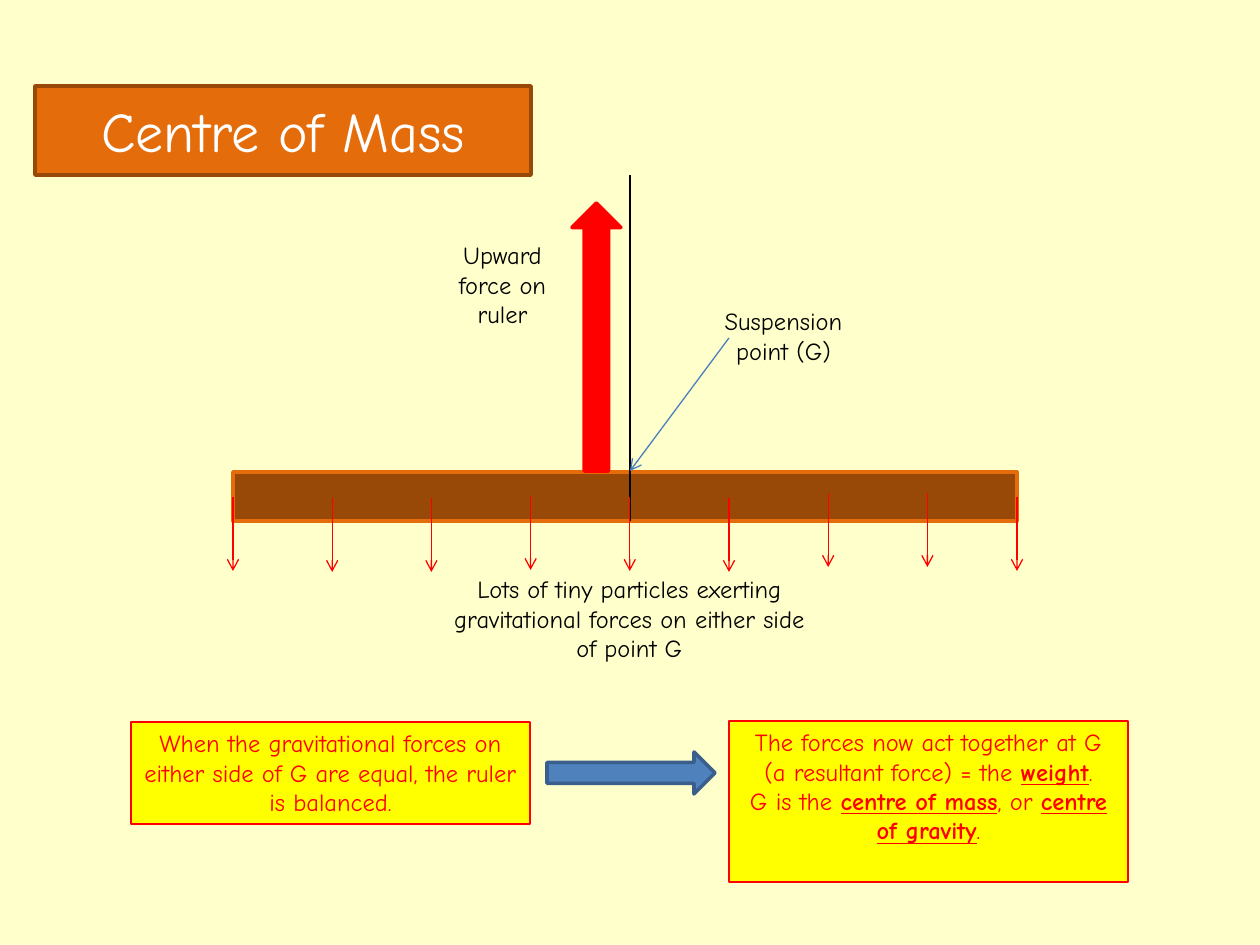
from lxml.etree import SubElement
from pptx import Presentation
from pptx.dml.color import RGBColor
from pptx.enum.shapes import MSO_CONNECTOR, MSO_SHAPE
from pptx.enum.text import MSO_ANCHOR, MSO_AUTO_SIZE, PP_ALIGN
from pptx.oxml.ns import qn
from pptx.util import Emu, Pt

PX = 914400 / 126
FONT = "Comic Neue"
COLORS = {
    "cream": "FFFFCC", "orange": "E46C0A", "brown": "984807", "red": "FF0000",
    "yellow": "FFFF00", "blue": "4F81BD", "dark_blue": "3A5F8C",
    "pointer": "4B7EBC", "black": "000000", "white": "FFFFFF",
}


def px(n):
    return Emu(round(n * PX))


def rgb(name):
    return RGBColor.from_string(COLORS[name])


def paint(sp, fill, line, width):
    sp.fill.solid()
    sp.fill.fore_color.rgb = rgb(fill)
    sp.line.color.rgb = rgb(line)
    sp.line.width = Pt(width)


def add_block(s, kind, x, y, w, h, fill, line, width=2):
    sp = s.shapes.add_shape(kind, px(x), px(y), px(w), px(h))
    sp.shadow.inherit = False
    paint(sp, fill, line, width)
    return sp


def add_line(s, x1, y1, x2, y2, color, arrow=False):
    c = s.shapes.add_connector(MSO_CONNECTOR.STRAIGHT, px(x1), px(y1), px(x2), px(y2))
    c.line.color.rgb = rgb(color)
    c.line.width = Pt(0.75)
    if arrow:
        SubElement(c.line._get_or_add_ln(), qn("a:tailEnd"), type="arrow")
    SubElement(c._element.spPr, qn("a:effectLst"))


def style(p, size, color):
    p.alignment = PP_ALIGN.CENTER
    p.font.size = Pt(size)
    p.font.name = FONT
    p.font.color.rgb = rgb(color)


def write(sp, paragraphs, color):
    """Fill a shape; each paragraph is a list of runs, the odd ones emphasised."""
    tf = sp.text_frame
    tf.word_wrap = True
    tf.vertical_anchor = MSO_ANCHOR.TOP
    for i, runs in enumerate(paragraphs):
        p = tf.add_paragraph() if i else tf.paragraphs[0]
        style(p, 14, color)
        for j, text in enumerate(runs):
            r = p.add_run()
            r.text = text
            if j % 2:
                r.font.bold = r.font.underline = True


def add_label(s, x, y, w, h, text):
    write(s.shapes.add_textbox(px(x), px(y), px(w), px(h)), [[text]], "black")


def add_title(s, x, y, w, h):
    sp = s.shapes.title
    sp.left, sp.top, sp.width, sp.height = px(x), px(y), px(w), px(h)
    geom = SubElement(sp._element.spPr, qn("a:prstGeom"), prst="roundRect")
    SubElement(geom, qn("a:avLst"))
    paint(sp, "orange", "brown", 2)
    tf = sp.text_frame
    tf.text = "Centre of Mass"
    tf.auto_size = MSO_AUTO_SIZE.NONE
    tf.vertical_anchor = MSO_ANCHOR.MIDDLE
    style(tf.paragraphs[0], 32, "white")


def add_ruler_diagram(s, x, y, w, h):
    # Ruler, cord and upward force
    ruler_y, ruler_h = y + 297, 49
    g = x + 397
    add_block(s, MSO_SHAPE.RECTANGLE, x, ruler_y, w, ruler_h, "brown", "orange")
    add_line(s, g, y, g, ruler_y + ruler_h, "black")
    add_block(s, MSO_SHAPE.UP_ARROW, x + 339, y + 28, 49, 268, "red", "red")
    add_label(s, x + 199, y + 59, 141, 102, "Upward force on ruler")

    # Weights of the particles, the last at the ruler's end
    for i, drop in enumerate((25, 26, 26, 24, 25, 26, 21, 21, 25)):
        weight_x = min(x + 99.2 * i, x + w)
        top = ruler_y + drop
        add_line(s, weight_x, top, weight_x, top + 74, "red", arrow=True)

    # Suspension point and caption
    add_line(s, g + 99, y + 163, g, ruler_y - 1, "pointer", arrow=True)
    add_label(s, x + 466, y + 125, 169, 72, "Suspension point (G)")
    add_label(s, x + 197, y + h - 102, 399, 102,
              "Lots of tiny particles exerting gravitational forces "
              "on either side of point G")


def add_conclusion(s, x, y, w, h):
    note_w = 399
    balance = add_block(s, MSO_SHAPE.RECTANGLE, x, y + 1, note_w, 102,
                        "yellow", "red", 0.75)
    write(balance, [["When the gravitational forces on either side of G are equal, "
                     "the ruler is balanced."]], "red")
    result = add_block(s, MSO_SHAPE.RECTANGLE, x + w - note_w, y, note_w, h,
                       "yellow", "red", 0.75)
    write(result, [
        ["The forces now act together at G (a resultant force) = the ", "weight", "."],
        ["G is the ", "centre of mass", ", or ", "centre of gravity", "."],
    ], "red")
    add_block(s, MSO_SHAPE.RIGHT_ARROW, x + 416, y + 31, 168, 42, "blue", "dark_blue")


def main():
    prs = Presentation()
    prs.slide_width, prs.slide_height = px(1260), px(945)
    s = prs.slides.add_slide(prs.slide_layouts[5])
    s.background.fill.solid()
    s.background.fill.fore_color.rgb = rgb("cream")
    add_title(s, 35, 86, 496, 89)
    add_ruler_diagram(s, 233, 175, 784, 495)
    add_conclusion(s, 131, 721, 997, 161)
    prs.save("out.pptx")


if __name__ == "__main__":
    main()
